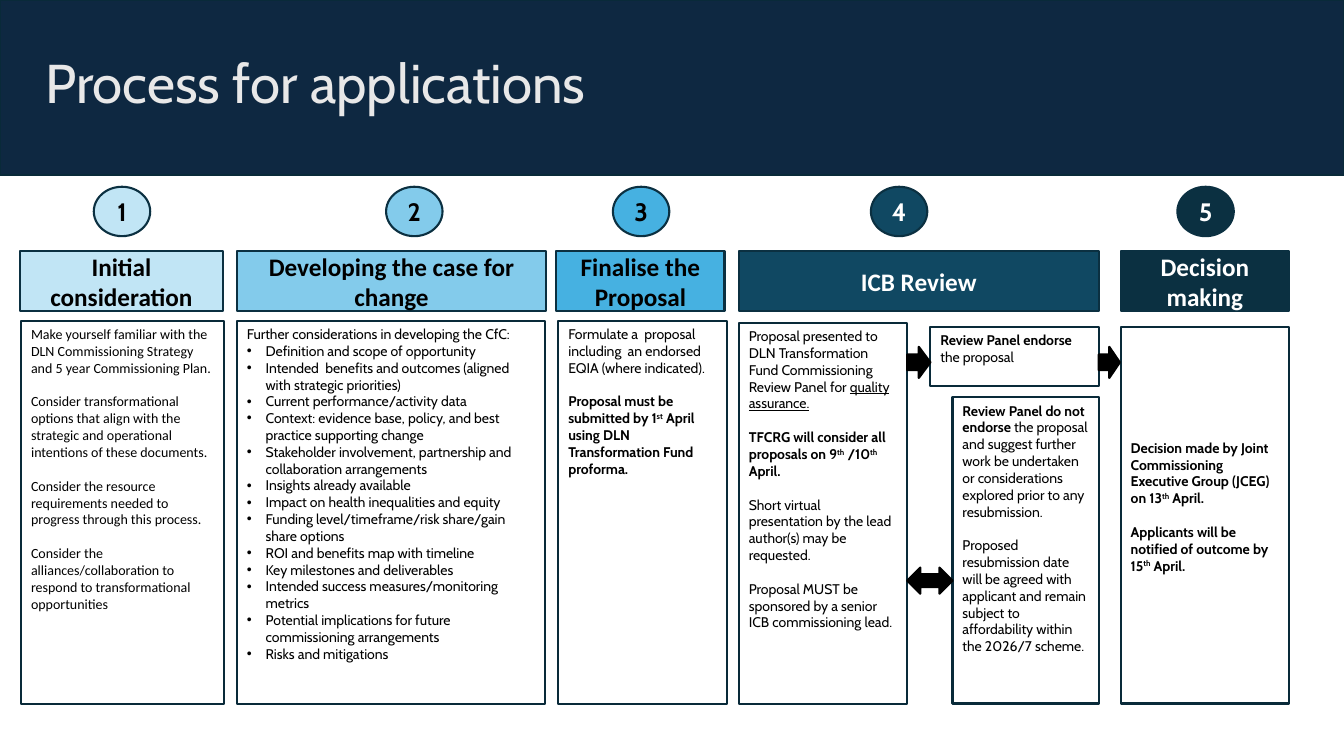
"""Build the slide that shows the five-step process for applications."""
from lxml import etree
from pptx import Presentation
from pptx import util as u
from pptx.dml.color import RGBColor
from pptx.enum import shapes, text
from pptx.oxml.ns import qn

Pt = u.Pt
SHAPE = shapes.MSO_SHAPE
ANCHOR = text.MSO_ANCHOR
ALIGN = text.PP_ALIGN

COLOURS = {
    "black": "000000", "white": "FFFFFF", "title": "E8E8E8", "band": "0E2841",
    "edge": "0B3041", "frame": "092A39", "pale": "C1E5F5", "light": "83CBEB",
    "mid": "46B1E1", "deep": "104862", "dark": "0B3041",
}
GAP = 12.1
INDENT = 13.5

STEPS = [
    ("Initial consideration", 14.4, 144.7, 67, "pale", "black"),
    ("Developing the case for change", 169.2, 221, 275.8, "light", "black"),
    ("Finalise the Proposal", 397.4, 120.2, 437.8, "mid", "black"),
    ("ICB Review", 527.8, 257, 622.1, "deep", "white"),
    ("Decision making", 800.6, 120.2, 841, "dark", "white"),
]

CONSIDER = [
    [("Make yourself familiar with the DLN Commissioning Strategy and 5 year Commissioning Plan.", "")],
    [("Consider transformational options that align with the strategic and operational "
      "intentions of these documents.", "")],
    [("Consider the resource requirements needed to progress through this process.", "")],
    [("Consider the alliances/collaboration to respond to transformational opportunities", "")],
]
DEVELOP = [[(line, "")] for line in (
    "Further considerations in developing the CfC:",
    "Definition and scope of opportunity",
    "Intended  benefits and outcomes (aligned with strategic priorities)",
    "Current performance/activity data",
    "Context: evidence base, policy, and best practice supporting change",
    "Stakeholder involvement, partnership and collaboration arrangements",
    "Insights already available",
    "Impact on health inequalities and equity",
    "Funding level/timeframe/risk share/gain share options",
    "ROI and benefits map with timeline",
    "Key milestones and deliverables",
    "Intended success measures/monitoring metrics",
    "Potential implications for future commissioning arrangements",
    "Risks and mitigations",
)]
FINALISE = [
    [("Formulate a  proposal including  an endorsed EQIA (where indicated).", "")],
    [("Proposal must be submitted by 1", "b"), ("st", "b^"),
     (" April using DLN Transformation Fund proforma.", "b")],
]
REVIEW = [
    [("Proposal presented to DLN Transformation Fund Commissioning Review Panel for ", ""),
     ("quality assurance.", "u")],
    [("TFCRG will consider all proposals on 9", "b"), ("th", "b^"), (" /10", "b"),
     ("th", "b^"), (" April.", "b")],
    [("Short virtual presentation by the lead author(s) may be requested.", "")],
    [("Proposal MUST be sponsored by a senior ICB commissioning lead.", "")],
]
ENDORSED = [[("Review Panel endorse ", "b"), ("the proposal", "")]]
NOT_ENDORSED = [
    [("Review Panel do not endorse ", "b"),
     ("the proposal and suggest further work be undertaken or considerations explored "
      "prior to any resubmission.", "")],
    [("Proposed resubmission date will be agreed with applicant and remain subject to "
      "affordability within the 2026/7 scheme.", "")],
]
DECISION = [
    [("Decision made by Joint Commissioning Executive Group (JCEG) on 13", "b"),
     ("th", "b^"), (" April.", "b")],
    [("Applicants will be notified of outcome by 15", "b"), ("th", "b^"), (" April.", "b")],
]

PANELS = [
    (CONSIDER, (15.1, 229, 144.7, 273.6), "Calibri"),
    (FINALISE, (398.9, 229, 120.2, 273.6), "Cabin"),
    (REVIEW, (527.8, 230.4, 120.2, 272.2), "Cabin"),
    (NOT_ENDORSED, (680.4, 283.7, 104.4, 218.9), "Cabin"),
    (ENDORSED, (664.6, 233.3, 120.2, 42.5), "Cabin"),
]
ARROWS = [
    (SHAPE.RIGHT_ARROW, (648, 247.7, 16.6, 22.3)),
    (SHAPE.RIGHT_ARROW, (784.8, 247.7, 15.1, 22.3)),
    (SHAPE.LEFT_RIGHT_ARROW, (648, 405.4, 32.4, 18.7)),
]


def colour(name):
    return RGBColor.from_string(COLOURS[name])


def add_box(page, kind, place, fill, line):
    box = page.shapes.add_shape(kind, *(Pt(length) for length in place))
    box.shadow.inherit = False
    if fill:
        box.fill.solid()
        box.fill.fore_color.rgb = colour(fill)
    else:
        box.fill.background()
    box.line.color.rgb = colour(line)
    box.line.width = Pt(1.5)
    box.text_frame.word_wrap = True
    return box


def add_span(para, words, size, face, ink, style=""):
    span = para.add_run()
    span.text = words
    span.font.size = Pt(size)
    span.font.name = face
    span.font.color.rgb = colour(ink)
    span.font.bold = "b" in style
    span.font.underline = "u" in style
    if "^" in style:
        span._r.get_or_add_rPr().set("baseline", "30000")


def add_bullet(para):
    props = para._p.get_or_add_pPr()
    props.set("marL", str(Pt(INDENT)))
    props.set("indent", str(-Pt(INDENT)))
    etree.SubElement(props, qn("a:buFont")).set("typeface", "Arial")
    etree.SubElement(props, qn("a:buChar")).set("char", "•")


def add_label(page, kind, place, words, face, fill, ink):
    box = add_box(page, kind, place, fill, "edge")
    box.text_frame.vertical_anchor = ANCHOR.MIDDLE
    para = box.text_frame.paragraphs[0]
    para.alignment = ALIGN.CENTER
    add_span(para, words, 18, face, ink, "b")


def add_panel(page, paragraphs, place, face="Cabin", bullets=False):
    box = add_box(page, SHAPE.RECTANGLE, place, None, "frame")
    frame = box.text_frame
    frame.vertical_anchor = ANCHOR.TOP
    for index, spans in enumerate(paragraphs):
        para = frame.add_paragraph() if index else frame.paragraphs[0]
        para.alignment = ALIGN.LEFT
        if index and bullets:
            add_bullet(para)
        elif index:
            para.space_before = Pt(GAP)
        for words, style in spans:
            add_span(para, words, 10, face, "black", style)
    return frame


def add_title(page, words):
    add_box(page, SHAPE.RECTANGLE, (0, 0, 960, 125.3), "band", "frame")
    title = page.shapes.title
    title.left, title.top, title.width, title.height = Pt(25.2), Pt(26.6), Pt(908.6), Pt(69.1)
    frame = title.text_frame
    frame.auto_size = text.MSO_AUTO_SIZE.NONE
    frame.vertical_anchor = ANCHOR.MIDDLE
    para = frame.paragraphs[0]
    para.alignment = ALIGN.LEFT
    para.line_spacing = 0.9
    add_span(para, words, 39, "Cabin", "title")
    page.shapes._spTree.append(title._element)


def main():
    deck = Presentation()
    deck.slide_width, deck.slide_height = Pt(960), Pt(540)
    page = deck.slides.add_slide(deck.slide_layouts[5])
    for number, (name, left, width, badge, fill, ink) in enumerate(STEPS, 1):
        add_label(page, SHAPE.RECTANGLE, (left, 179.3, width, 43.2), name, "Calibri", fill, ink)
        add_label(page, SHAPE.OVAL, (badge, 133.4, 40.3, 35.3), str(number), "Cabin", fill, ink)
    for paragraphs, place, face in PANELS:
        add_panel(page, paragraphs, place, face)
    add_panel(page, DEVELOP, (169.2, 229, 220.3, 273.6), bullets=True)
    decision = add_panel(page, DECISION, (800.6, 233.3, 120.2, 269.3))
    decision.vertical_anchor = ANCHOR.MIDDLE
    decision.margin_bottom = Pt(3.6 + GAP)
    for kind, place in ARROWS:
        add_box(page, kind, place, "black", "black")
    add_title(page, "Process for applications")
    deck.save("out.pptx")


if __name__ == "__main__":
    main()
